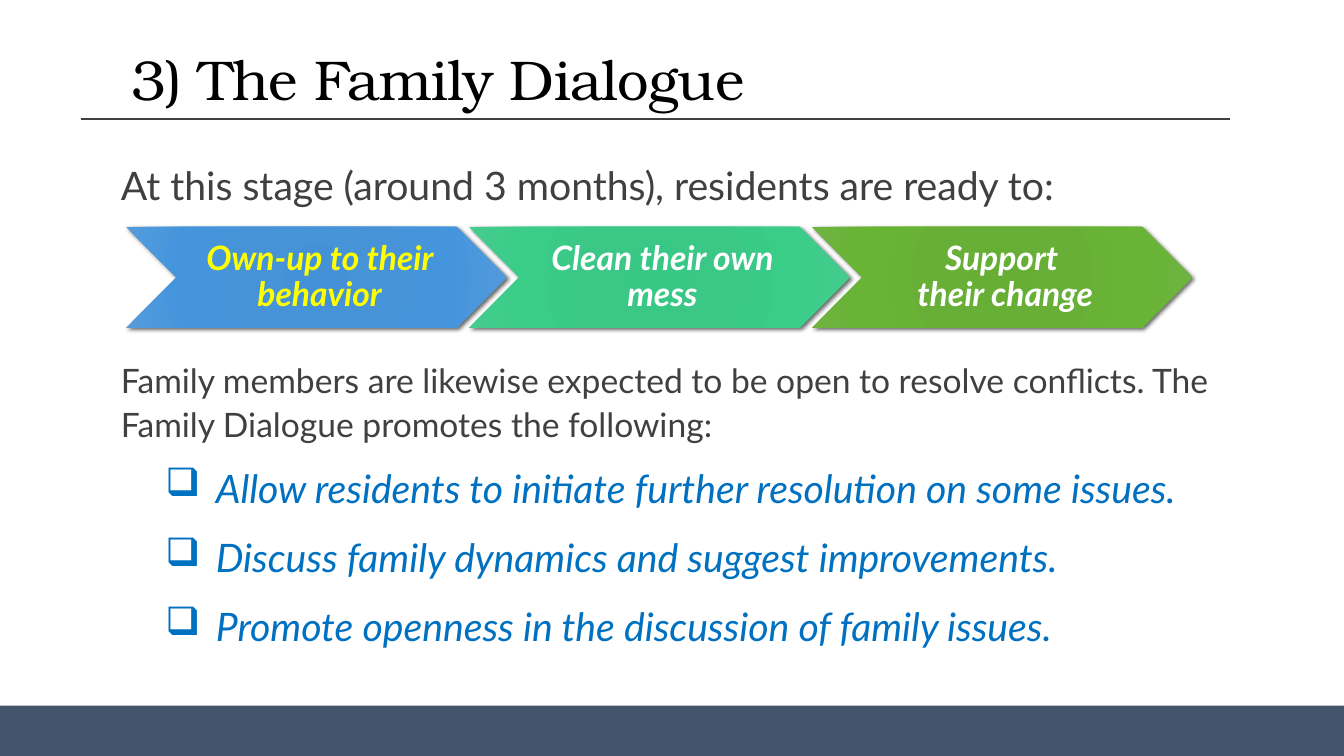
from lxml.etree import SubElement
from pptx import Presentation
from pptx.dml.color import RGBColor
from pptx.enum.shapes import MSO_CONNECTOR, MSO_SHAPE
from pptx.enum.text import MSO_ANCHOR, MSO_AUTO_SIZE, PP_ALIGN
from pptx.oxml import parse_xml
from pptx.oxml.ns import nsdecls, qn
from pptx.util import Cm, Pt

BLACK = RGBColor(0x00, 0x00, 0x00)
WHITE = RGBColor(0xFF, 0xFF, 0xFF)
YELLOW = RGBColor(0xFF, 0xFF, 0x00)
GREY = RGBColor(0x40, 0x40, 0x40)
SLATE = RGBColor(0x44, 0x54, 0x6A)
BLUE = RGBColor(0x00, 0x70, 0xC0)


def format_runs(p, font, size, color, bold=False, italic=False):
    for r in p.runs:
        r.font.name = font
        r.font.size = Pt(size)
        r.font.color.rgb = color
        r.font.bold = bold
        r.font.italic = italic


def style_chevron(sp, colors):
    """Give a chevron its radial gradient and soft shadow."""
    stops = "".join(
        f'<a:gs pos="{pos * 1000}"><a:srgbClr val="{color}"/></a:gs>'
        for pos, color in zip((0, 34, 70, 100), colors))
    sp.line.fill.background()
    geometry = sp._element.spPr.find(qn("a:prstGeom"))
    geometry.addnext(parse_xml(
        f'<a:gradFill {nsdecls("a")} rotWithShape="1"><a:gsLst>{stops}</a:gsLst>'
        '<a:path path="circle"><a:fillToRect l="100000" t="100000" r="100000" b="100000"/>'
        '</a:path></a:gradFill>'))
    sp._element.spPr.append(parse_xml(
        f'<a:effectLst {nsdecls("a")}><a:outerShdw blurRad="{Pt(3)}" dist="{Pt(2)}" '
        'dir="2700000" algn="tl" rotWithShape="0"><a:srgbClr val="000000">'
        '<a:alpha val="60000"/></a:srgbClr></a:outerShdw></a:effectLst>'))


prs = Presentation()
prs.slide_width, prs.slide_height = Cm(33.87), Cm(19.05)
s = prs.slides.add_slide(prs.slide_layouts[5])

# Footer band
band = s.shapes.add_shape(MSO_SHAPE.RECTANGLE, 0, Cm(17.78), prs.slide_width, Cm(1.27))
band.shadow.inherit = False
band.fill.solid()
band.fill.fore_color.rgb = SLATE
band.line.fill.background()

# Rule under the title
rule = s.shapes.add_connector(MSO_CONNECTOR.STRAIGHT, Cm(2.03), Cm(3), Cm(30.99), Cm(3))
rule.line.color.rgb = GREY
rule.line.width = Pt(1)
SubElement(rule._element.spPr, qn("a:effectLst"))

# Title
title = s.shapes.title
title.left, title.top, title.width, title.height = Cm(3.05), Cm(0.79), Cm(27.94), Cm(2.18)
tf = title.text_frame
tf.text = "3) The Family Dialogue"
tf.auto_size = MSO_AUTO_SIZE.NONE
tf.vertical_anchor = MSO_ANCHOR.BOTTOM
p = tf.paragraphs[0]
p.alignment = PP_ALIGN.LEFT
p.line_spacing = 0.9
format_runs(p, "TeX Gyre Bonum", 40, BLACK)
p.runs[0].font._element.set("spc", "-50")

# Body text: the second paragraph leaves room for the chevrons
body = s.shapes.add_textbox(Cm(3.05), Cm(3.81), Cm(27.94), Cm(13.97))
tf = body.text_frame
tf.word_wrap = True
tf.margin_left = tf.margin_right = 0
paragraphs = [
    ("At this stage (around 3 months), residents are ready to:", 28, 12, False),
    ("Family members are likewise expected to be open to resolve conflicts. "
     "The Family Dialogue promotes the following:", 24, 103.5, False),
    ("Allow residents to initiate further resolution on some issues.", 28, 12, True),
    ("Discuss family dynamics and suggest improvements.", 28, 12, True),
    ("Promote openness in the discussion of family issues.", 28, 12, True),
]
for i, (text, size, before, bulleted) in enumerate(paragraphs):
    p = tf.add_paragraph() if i else tf.paragraphs[0]
    p.text = text
    p.space_before = Pt(before)
    p.space_after = Pt(4 if bulleted else 2)
    p.line_spacing = 1.0 if bulleted else 1.1
    format_runs(p, "Lato", size, BLUE if bulleted else GREY, italic=bulleted)
    if bulleted:
        pPr = p._p.get_or_add_pPr()
        pPr.set("marL", str(Cm(2.39)))
        pPr.set("indent", str(-Cm(1.27)))
        SubElement(pPr, qn("a:buChar")).set("char", "❑")

# Chevron steps
steps = [
    ("Own-up to their behavior", YELLOW, ("4491D8", "4793D7", "4595DD", "559BDB")),
    ("Clean their own mess", WHITE, ("37C885", "3BC786", "39CD88", "47CB8E")),
    ("Support \vtheir change", WHITE, ("66AF34", "67AF37", "68B435", "6FB242")),
]
for i, (text, color, gradient) in enumerate(steps):
    sp = s.shapes.add_shape(MSO_SHAPE.CHEVRON, Cm(3.18 + 8.64 * i), Cm(5.72), Cm(9.6), Cm(2.54))
    style_chevron(sp, gradient)
    tf = sp.text_frame
    tf.word_wrap = True
    tf.vertical_anchor = MSO_ANCHOR.MIDDLE
    tf.margin_left = Cm(0.25)
    tf.margin_right = tf.margin_top = tf.margin_bottom = Cm(0.1)
    tf.text = text
    p = tf.paragraphs[0]
    p.alignment = PP_ALIGN.CENTER
    p.line_spacing = 0.9
    format_runs(p, "Lato", 24, color, bold=True, italic=True)

prs.save("out.pptx")
